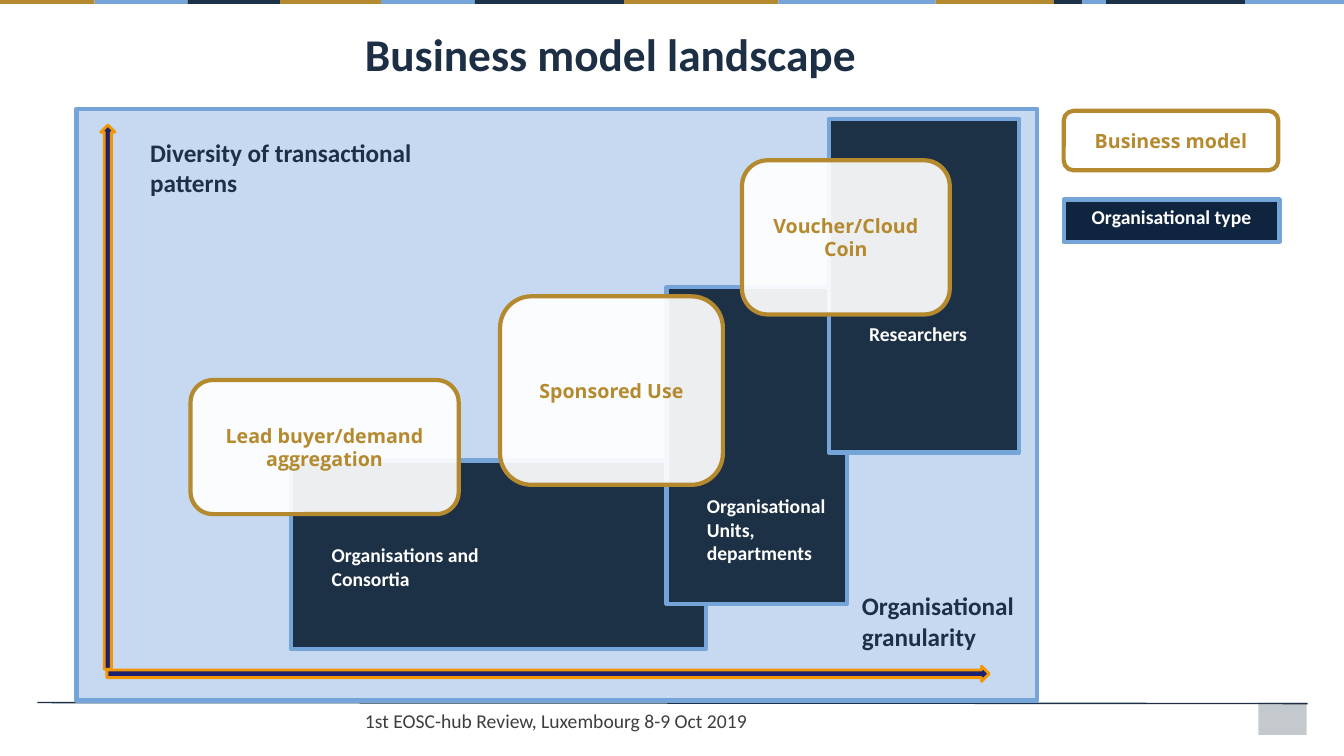
from lxml import etree
from pptx import Presentation
from pptx.dml.color import RGBColor
from pptx.enum.shapes import MSO_CONNECTOR, MSO_SHAPE
from pptx.enum.text import MSO_ANCHOR, PP_ALIGN
from pptx.oxml.ns import qn
from pptx.util import Inches, Pt

RECT, ROUND = MSO_SHAPE.RECTANGLE, MSO_SHAPE.ROUNDED_RECTANGLE
ARROW = MSO_SHAPE.RIGHT_ARROW
STRAIGHT = MSO_CONNECTOR.STRAIGHT
TOP, MIDDLE = MSO_ANCHOR.TOP, MSO_ANCHOR.MIDDLE
LEFT, CENTER = PP_ALIGN.LEFT, PP_ALIGN.CENTER

WIDE, HIGH = 13.33, 7.5
NAVY, GOLD, BLUE, WHITE = "1C3046", "B5892D", "75A5D8", "FFFFFF"
INK = "1D2F45"
LINE = 0.237  # height of one 14 pt line in inches


def color(code):
    return RGBColor.from_string(code)


def part(box, x, y, w, h):
    """Box given in percent of an outer box."""
    left, top, wide, high = box
    return (left + wide * x / 100, top + high * y / 100,
            wide * w / 100, high * h / 100)


def inches(box):
    return [Inches(v) for v in box]


def write(shape, text, size=14, font="Calibri", ink=WHITE, bold=True,
          align=LEFT, anchor=MIDDLE, wrap=True, indent=0, drop=0):
    frame = shape.text_frame
    frame.word_wrap = wrap
    frame.vertical_anchor = anchor
    frame.margin_left = Inches(0.1 + indent)
    frame.margin_right = Inches(0.1)
    frame.margin_top = Inches(0.05 + drop)
    frame.margin_bottom = Inches(0.05)
    frame.text = text
    for para in frame.paragraphs:
        para.alignment = align
        style = para.font
        style.size, style.name, style.bold = Pt(size), font, bold
        style.color.rgb = color(ink)


def draw(slide, box, fill, kind=RECT, edge=None, width=3, alpha=100):
    shape = slide.shapes.add_shape(kind, *inches(box))
    shape.shadow.inherit = False
    shape.fill.solid()
    shape.fill.fore_color.rgb = color(fill)
    if alpha < 100:
        tone = shape.fill._xPr.find(qn("a:solidFill"))[0]
        etree.SubElement(tone, qn("a:alpha")).set("val", str(alpha * 1000))
    if edge:
        shape.line.color.rgb = color(edge)
        shape.line.width = Pt(width)
    else:
        shape.line.fill.background()
    return shape


def note(slide, box, text, **style):
    write(slide.shapes.add_textbox(*inches(box)), text, anchor=TOP, **style)


def model(slide, box, text):
    shape = draw(slide, box, WHITE, ROUND, GOLD, alpha=92)
    write(shape, text, font="Open Sans", ink=GOLD, align=CENTER)


def strip(slide, box):
    """Coloured bands along the top edge."""
    edges = [0, 0.94, 1.86, 2.78, 3.78, 4.71, 6.19, 7.72, 9.28,
             10.45, 10.73, 10.97, 12.35, WIDE]
    fills = [GOLD, BLUE, NAVY] * 2 + [GOLD, BLUE, GOLD, NAVY, BLUE, NAVY, BLUE]
    left, top, _, high = box
    for start, end, fill in zip(edges, edges[1:], fills):
        draw(slide, (left + start, top, end - start, high), fill)


def footer(slide, box):
    draw(slide, part(box, 96.11, 0, 3.81, 100), INK, alpha=26)
    left, top, wide, _ = box
    rule = slide.shapes.add_connector(
        STRAIGHT, *inches((left + wide, top + 0.01, left, top)))
    rule.line.color.rgb = color(INK)
    rule.line.width = Pt(1)
    etree.SubElement(rule._element.spPr, qn("a:effectLst"))
    note(slide, part(box, 25, 3, 47.46, 97),
         "1st EOSC-hub Review, Luxembourg 8-9 Oct 2019",
         ink="3D3D3D", bold=False)


def heading(slide, box):
    title = slide.shapes.title
    title.left, title.top, title.width, title.height = inches(box)
    write(title, "Business model landscape", size=32.4, ink=INK, anchor=TOP)


def landscape(slide, box):
    draw(slide, box, "C6D9F1", edge=BLUE)

    # Organisation types; the last value is how many lines the text drops
    types = [
        ("Organisations and\nConsortia", (22.35, 59.45, 43.13, 31.86), 1),
        ("Organisational\nUnits, departments",
         (61.39, 30.15, 18.78, 53.49), 7),
        ("Researchers", (78.28, 1.7, 19.83, 56.39), 4),
    ]
    for text, place, lines in types:
        shape = draw(slide, part(box, *place), NAVY, edge=BLUE)
        write(shape, text, indent=0.3, drop=lines * LINE)

    # Business models
    models = [
        ("Sponsored Use", (44.07, 31.69, 23.19, 31.86)),
        ("Lead buyer/demand aggregation", (11.86, 45.83, 27.91, 22.66)),
        ("Voucher/Cloud Coin", (69.25, 8.69, 21.62, 26.06)),
    ]
    for text, place in models:
        model(slide, part(box, *place), text)

    # Axes and their names
    axes = [
        ("Organisational\ngranularity", (80.69, 80.58, 18.68, 12.1),
         (3.15, 94.21, 91.82, 2.56), 0),
        ("Diversity of transactional\npatterns", (6.61, 3.92, 30.12, 12.1),
         (-25.08, 47.53, 56.66, 2.39), 270),
    ]
    for text, place, shaft, turn in axes:
        arrow = draw(slide, part(box, *shaft), "1B216E", ARROW, "F39605", 2)
        arrow.rotation = turn
        note(slide, part(box, *place), text, size=18, ink=NAVY, wrap=False)


def legend(slide, box):
    model(slide, part(box, 0, 0, 99.5, 45.38), "Business model")
    key = draw(slide, part(box, 0, 67.69, 100, 32.31), "0F243E", edge=BLUE)
    write(key, "Organisational type", align=CENTER, anchor=TOP)


def main():
    deck = Presentation()
    deck.slide_width, deck.slide_height = Inches(WIDE), Inches(HIGH)
    slide = deck.slides.add_slide(deck.slide_layouts[5])
    footer(slide, (0.37, 6.97, 12.6, 0.32))
    strip(slide, (0, 0, WIDE, 0.04))
    heading(slide, (3.52, 0.21, 9.45, 0.59))
    landscape(slide, (0.76, 1.08, 9.53, 5.87))
    legend(slide, (10.55, 1.1, 2.14, 1.3))
    deck.save("out.pptx")


if __name__ == "__main__":
    main()
